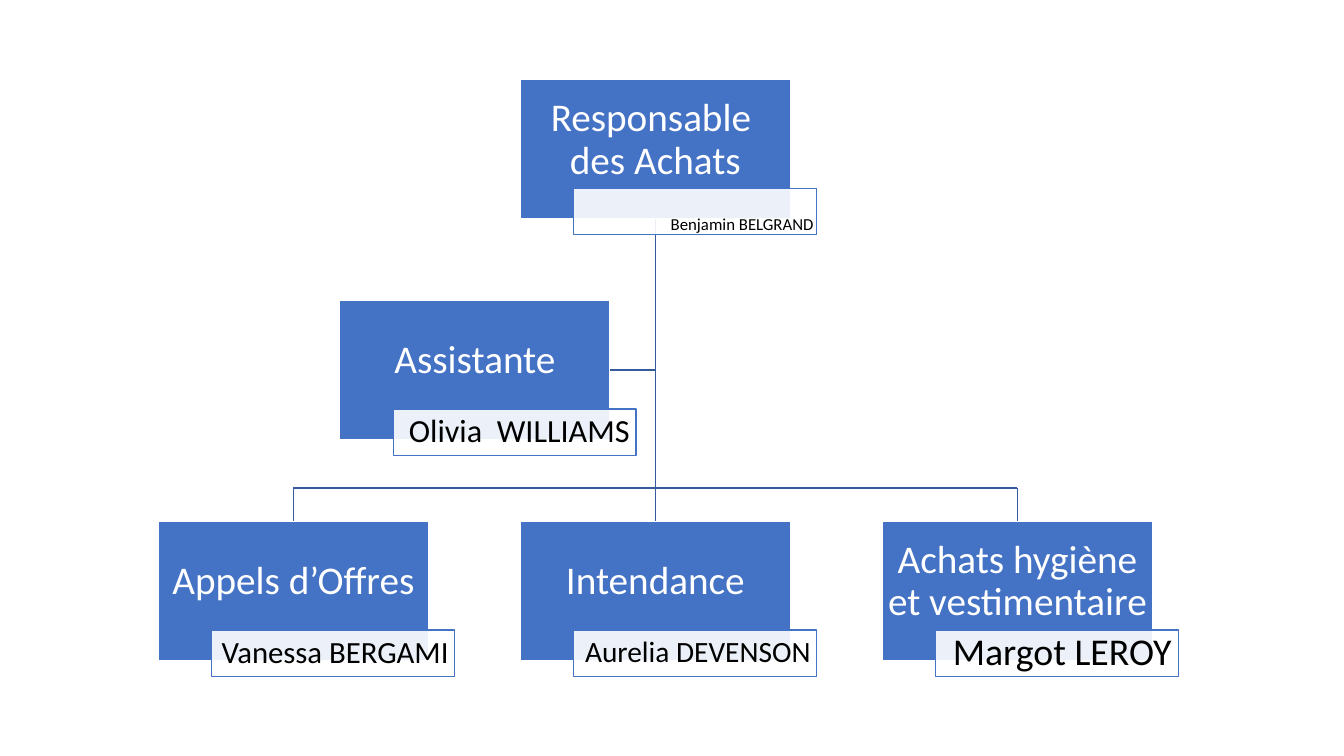
from lxml import etree
from pptx import Presentation
from pptx import util as u
from pptx.dml.color import RGBColor
from pptx.enum import shapes, text
from pptx.oxml import ns

PX = 9144
BLUE = RGBColor(0x44, 0x72, 0xC4)
DARK_BLUE = RGBColor(0x36, 0x5B, 0x9D)
WHITE = RGBColor(0xFF, 0xFF, 0xFF)
BLACK = RGBColor(0x00, 0x00, 0x00)

ROLE_WIDTH, ROLE_HEIGHT = 268, 138
NAME_WIDTH, NAME_HEIGHT = 241, 46
NAME_SHIFT_X, NAME_SHIFT_Y = 53, 108
CENTRE_LEFT, TOP = 516, 79
COLUMN_STEP, ROW_STEP = 359, 219
BUS_RISE = 33

MIDDLE, BOTTOM = text.MSO_ANCHOR.MIDDLE, text.MSO_ANCHOR.BOTTOM
POSTS = {
    "manager": (0, 0, "Responsable \vdes Achats", "Benjamin BELGRAND", 12, 3, BOTTOM),
    "tenders": (-1, 2, "Appels d’Offres", "Vanessa BERGAMI", 22, 6, MIDDLE),
    "supplies": (0, 2, "Intendance", "Aurelia DEVENSON", 21, 6, MIDDLE),
    "clothing": (1, 2, "Achats hygiène et vestimentaire", "Margot LEROY", 27, 7, MIDDLE),
    "assistant": (-0.5, 1, "Assistante", "Olivia  WILLIAMS", 23, 6, MIDDLE),
}


def px(length):
    return u.Emu(length * PX)


def set_values(target, values):
    for name, value in values.items():
        setattr(target, name, value)


def add_box(slide, box, words, fill, line, size, color, align, margins, anchor=MIDDLE):
    shape = slide.shapes.add_shape(shapes.MSO_SHAPE.RECTANGLE, *map(px, box))
    shape.shadow.inherit = False
    shape.fill.solid()
    shape.fill.fore_color.rgb = fill
    shape.line.color.rgb = line
    shape.line.width = u.Pt(1)
    frame = shape.text_frame
    left, top, right, bottom = map(px, margins)
    set_values(frame, {
        "margin_left": left, "margin_top": top,
        "margin_right": right, "margin_bottom": bottom,
        "word_wrap": True, "vertical_anchor": anchor, "text": words,
    })
    paragraph = frame.paragraphs[0]
    set_values(paragraph, {"alignment": align, "line_spacing": 0.9})
    for run in paragraph.runs:
        set_values(run.font, {"name": "Calibri", "size": u.Pt(size)})
        run.font.color.rgb = color
    return shape


def add_role(slide, left, top, title):
    return add_box(slide, (left, top, ROLE_WIDTH, ROLE_HEIGHT), title, BLUE, WHITE,
                   28, WHITE, text.PP_ALIGN.CENTER, (2, 2, 2, 20))


def add_name(slide, left, top, name, size, margin, anchor):
    box = (left + NAME_SHIFT_X, top + NAME_SHIFT_Y, NAME_WIDTH, NAME_HEIGHT)
    shape = add_box(slide, box, name, WHITE, BLUE, size, BLACK,
                    text.PP_ALIGN.RIGHT, (margin, 1, margin, 1), anchor)
    color = shape.fill._xPr.find(ns.qn("a:solidFill"))[0]
    etree.SubElement(color, ns.qn("a:alpha"), val="90000")


def add_line(slide, start, end, begin=None, finish=None):
    line = slide.shapes.add_connector(shapes.MSO_CONNECTOR.STRAIGHT, *map(px, start + end))
    line.line.color.rgb = DARK_BLUE
    line.line.width = u.Pt(1)
    etree.SubElement(line._element.spPr, ns.qn("a:effectLst"))
    if begin:
        line.begin_connect(*begin)
    if finish:
        line.end_connect(*finish)


def add_links(slide, roles, left, top):
    centre = left + ROLE_WIDTH // 2
    team_top = top + 2 * ROW_STEP
    bus = team_top - BUS_RISE
    assistant_middle = top + ROW_STEP + ROLE_HEIGHT // 2
    add_line(slide, (centre, top + ROLE_HEIGHT), (centre, team_top),
             (roles["manager"], 2), (roles["supplies"], 0))
    add_line(slide, (centre - COLUMN_STEP // 2, assistant_middle),
             (centre, assistant_middle), (roles["assistant"], 3))
    add_line(slide, (centre - COLUMN_STEP, bus), (centre + COLUMN_STEP, bus))
    for side, role in ((-1, "tenders"), (1, "clothing")):
        x = centre + side * COLUMN_STEP
        add_line(slide, (x, bus), (x, team_top), finish=(roles[role], 0))


def add_chart_of_posts(slide, left, top):
    places = {key: (left + int(column * COLUMN_STEP), top + row * ROW_STEP)
              for key, (column, row, *_) in POSTS.items()}
    roles = {key: add_role(slide, *places[key], POSTS[key][2]) for key in POSTS}
    add_links(slide, roles, left, top)
    for key, post in POSTS.items():
        add_name(slide, *places[key], *post[3:])


def main():
    presentation = Presentation()
    set_values(presentation, {"slide_width": px(1333), "slide_height": px(750)})
    slide = presentation.slides.add_slide(presentation.slide_layouts[6])
    add_chart_of_posts(slide, CENTRE_LEFT, TOP)
    presentation.save("out.pptx")


if __name__ == "__main__":
    main()
